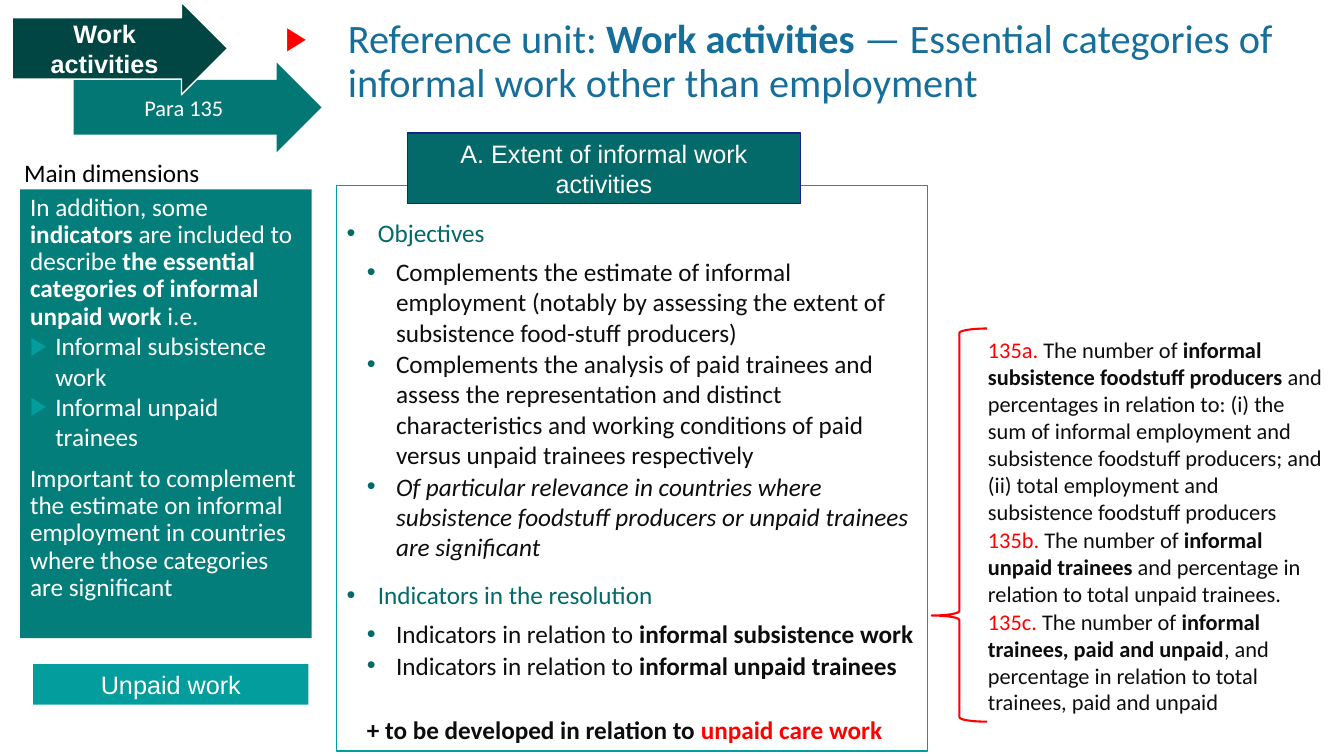
from lxml import etree
from pptx import Presentation
from pptx.dml.color import RGBColor
from pptx.enum.shapes import MSO_SHAPE
from pptx.enum.text import MSO_ANCHOR, PP_ALIGN
from pptx.oxml.ns import qn
from pptx.util import Emu, Pt

RECT = MSO_SHAPE.RECTANGLE
ARROW = MSO_SHAPE.RIGHT_ARROW
BRACE = MSO_SHAPE.LEFT_BRACE
TOP, MIDDLE = MSO_ANCHOR.TOP, MSO_ANCHOR.MIDDLE
LEFT, CENTER = PP_ALIGN.LEFT, PP_ALIGN.CENTER

EMU_PER_PX = 9144
COLORS = {
    "white": "FFFFFF", "black": "000000", "ink": "0D0D0D", "red": "FF0000",
    "title": "166E9A", "aqua": "049D9D", "teal": "037774", "dark": "024644",
    "panel": "037E7B", "heading": "036969", "navy": "16218D",
}


def px(n):
    return Emu(n * EMU_PER_PX)


def rgb(name):
    return RGBColor.from_string(COLORS[name])


def set_frame(tf, anchor=TOP, insets=(10, 5, 10, 5)):
    tf.word_wrap = True
    tf.vertical_anchor = anchor
    tf.margin_left, tf.margin_top, tf.margin_right, tf.margin_bottom = map(px, insets)
    return tf


def add_shape(slide, kind, box, fill=None, line=None, width=1, adj=()):
    sp = slide.shapes.add_shape(kind, *map(px, box))
    sp.shadow.inherit = False
    if fill:
        sp.fill.solid()
        sp.fill.fore_color.rgb = rgb(fill)
    else:
        sp.fill.background()
    if line:
        sp.line.color.rgb = rgb(line)
        sp.line.width = Pt(width)
    else:
        sp.line.fill.background()
    for i, value in enumerate(adj):
        sp.adjustments[i] = value
    return sp


def add_text_box(slide, box, insets=(10, 5, 10, 5)):
    sp = slide.shapes.add_textbox(*map(px, box))
    return set_frame(sp.text_frame, insets=insets)


def set_bullet(p, char, color, percent=100):
    pPr = p._p.get_or_add_pPr()
    clr = etree.SubElement(pPr, qn("a:buClr"))
    etree.SubElement(clr, qn("a:srgbClr"), val=COLORS[color])
    etree.SubElement(pPr, qn("a:buSzPct"), val=str(percent * 1000))
    etree.SubElement(pPr, qn("a:buFont"), typeface="Arial")
    etree.SubElement(pPr, qn("a:buChar"), char=char)


def add_paragraph(tf, runs, size=18, color="ink", font="Calibri", align=LEFT,
                  margin=0, hang=0, spacing=1.0, before=0, after=0, bullet=None):
    p = tf.paragraphs[0]
    if p.runs:
        p = tf.add_paragraph()
    p.alignment = align
    p.line_spacing = spacing
    p.space_before, p.space_after = Pt(before), Pt(after)
    pPr = p._p.get_or_add_pPr()
    pPr.set("marL", str(px(margin)))
    pPr.set("indent", str(px(-hang)))
    if bullet:
        set_bullet(p, *bullet)
    for text, *styles in runs:
        r = p.add_run()
        r.text = text
        r.font.name = font
        r.font.size = Pt(size)
        r.font.bold = "bold" in styles
        r.font.italic = "italic" in styles
        r.font.color.rgb = rgb("red" if "red" in styles else color)


def add_label(slide, kind, box, text, fill, line=None, adj=(),
              font="Arial", size=18, style="plain"):
    sp = add_shape(slide, kind, box, fill, line, adj=adj)
    tf = set_frame(sp.text_frame, MIDDLE)
    add_paragraph(tf, [(text, style)], size, "white", font, CENTER)


def add_title(slide):
    tf = add_text_box(slide, (267, 19, 1042, 64), (0, 0, 0, 0))
    add_paragraph(tf, [
        ("Reference unit: ",), ("Work activities ", "bold"),
        ("— Essential categories of informal work other than employment",),
    ], 28.8, "title", margin=78, hang=62, spacing=0.9, after=5,
        bullet=("▶", "red", 80))


def add_dimensions(slide):
    add_paragraph(add_text_box(slide, (14, 151, 235, 40)),
                  [("Main dimensions",)], color="black")
    tf = set_frame(add_shape(slide, RECT, (20, 188, 289, 445), "panel").text_frame)
    body = {"color": "white", "spacing": 0.9, "before": 10}
    add_paragraph(tf, [
        ("In addition, some ",), ("indicators", "bold"),
        (" are included to describe ",),
        ("the essential categories of informal unpaid work ", "bold"), ("i.e.",),
    ], **body)
    for item in ("Informal subsistence work", "Informal unpaid trainees"):
        add_paragraph(tf, [(item,)], color="white", margin=25, hang=25,
                      bullet=("▶", "aqua"))
    add_paragraph(tf, [(
        "Important to complement the estimate on informal employment in "
        "countries where those categories are significant",)], **body)


def add_indicator_notes(slide):
    tf = set_frame(add_shape(slide, RECT, (950, 329, 375, 390), "white").text_frame)
    notes = [
        ("135a.", "informal subsistence foodstuff producers ",
         "and percentages in relation to: (i) the sum of informal employment and "
         "subsistence foodstuff producers; and (ii) total employment and "
         "subsistence foodstuff producers"),
        ("135b.", "informal unpaid trainees",
         " and percentage in relation to total unpaid trainees."),
        ("135c.", "informal trainees, paid and unpaid",
         ", and percentage in relation to total trainees, paid and unpaid"),
    ]
    for number, subject, rest in notes:
        add_paragraph(tf, [(number, "red"), (" The number of ",),
                           (subject, "bold"), (rest,)], 16, margin=20, after=1)


def add_extent_panel(slide):
    sp = add_shape(slide, RECT, (334, 184, 586, 561), "white", "aqua")
    tf = set_frame(sp.text_frame, insets=(10, 32, 10, 5))
    sections = [
        ("Objectives", 0, [
            [("Complements the estimate of informal employment (notably by "
              "assessing the extent of subsistence food-stuff producers)",)],
            [("Complements the analysis of paid trainees and assess the "
              "representation and distinct characteristics and working "
              "conditions of paid versus unpaid trainees respectively",)],
            [("Of particular relevance in countries where subsistence foodstuff "
              "producers or unpaid trainees are significant", "italic")],
        ]),
        ("Indicators in the resolution", 12, [
            [("Indicators in relation to ",), (subject, "bold")]
            for subject in ("informal subsistence work", "informal unpaid trainees")
        ]),
    ]
    dot = ("•", "heading")
    for heading, before, items in sections:
        add_paragraph(tf, [(heading,)], color="heading", margin=31, hang=31,
                      before=before, after=6, bullet=dot)
        for runs in items:
            add_paragraph(tf, runs, margin=49, hang=29, after=1, bullet=dot)
    add_paragraph(tf, [("+ to be developed in relation to ", "bold"),
                       ("unpaid care work", "bold", "red")],
                  margin=20, before=23, after=1)


def main():
    prs = Presentation()
    prs.slide_width, prs.slide_height = px(1333), px(750)
    slide = prs.slides.add_slide(prs.slide_layouts[6])
    add_title(slide)
    add_label(slide, RECT, (33, 659, 273, 40), "Unpaid work", "aqua")
    add_label(slide, ARROW, (73, 62, 246, 89), "Para 135", "teal",
              adj=(0.61, 0.5), font="Calibri", size=16)
    add_label(slide, ARROW, (12, 2, 214, 92), "Work activities", "dark", "white",
              adj=(0.66, 0.5), style="bold")
    add_dimensions(slide)
    add_indicator_notes(slide)
    add_extent_panel(slide)
    add_label(slide, RECT, (404, 132, 390, 70),
              "A. Extent of informal work activities", "heading", "navy")
    add_shape(slide, BRACE, (924, 326, 55, 390), line="red", width=1.5,
              adj=(0.08, 0.73))
    prs.save("out.pptx")


if __name__ == "__main__":
    main()
